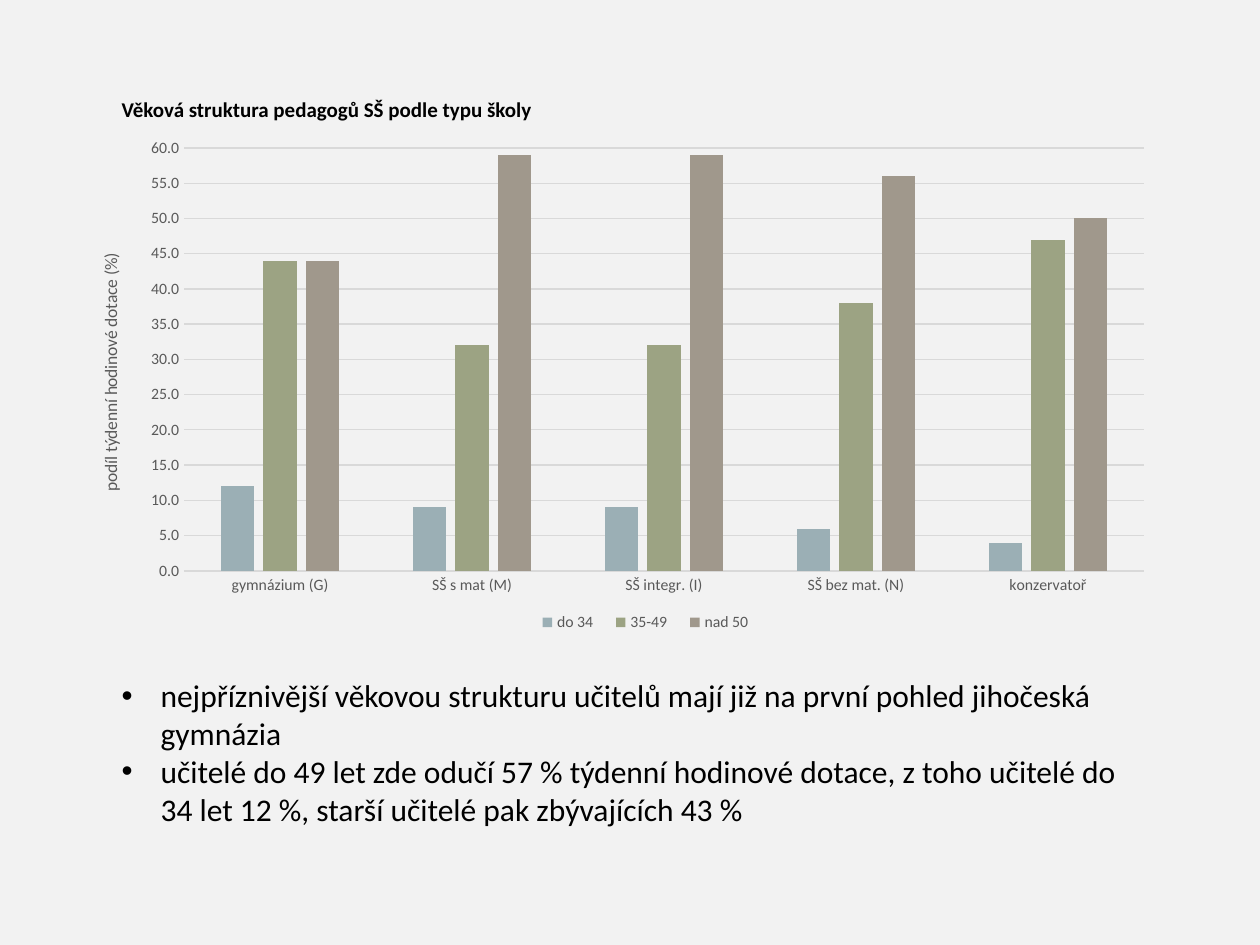
from dataclasses import dataclass

from lxml.etree import SubElement
from pptx import Presentation
from pptx.chart.data import CategoryChartData
from pptx.dml.color import RGBColor
from pptx.enum.chart import XL_CHART_TYPE, XL_LEGEND_POSITION, XL_TICK_MARK
from pptx.enum.text import MSO_ANCHOR, MSO_AUTO_SIZE, PP_ALIGN
from pptx.oxml.ns import qn
from pptx.util import Emu, Pt

TITLE = "Věková struktura pedagogů SŠ podle typu školy"
BULLETS = [
    "nejpříznivější věkovou strukturu učitelů mají již na první pohled jihočeská gymnázia",
    "učitelé do 49 let zde odučí 57 % týdenní hodinové dotace, z toho učitelé do 34 let 12 %, "
    "starší učitelé pak zbývajících 43 %",
]
VALUE_AXIS_TITLE = "podíl týdenní hodinové dotace (%)"
SCHOOL_TYPES = ["gymnázium (G)", "SŠ s mat (M)", "SŠ integr. (I)", "SŠ bez mat. (N)", "konzervatoř"]
AGE_GROUPS = [
    ("do 34", [12, 9, 9, 6, 4], "9BAFB5"),
    ("35-49", [44, 32, 32, 38, 47], "9CA383"),
    ("nad 50", [44, 59, 59, 56, 50], "A0988C"),
]

# left, top, width, height in px
SLIDE_SIZE = (1260, 945)
CHART_BOX = (74, 129, 1091, 514)
PLOT_BOX = (184, 148, 960, 423)
AXIS_TITLE_CORNER = (96, 250)
LEGEND_BOX = (525, 607, 241, 31)
TITLE_BOX = (109, 90, 766, 77)
BODY_BOX = (109, 670, 1057, 242)
BULLET_INDENT = 39


@dataclass(frozen=True)
class Theme:
    font: str = "Calibri"
    background: str = "F2F2F2"
    text: str = "000000"
    chart_text: str = "595959"
    grid: str = "D9D9D9"
    title_size: int = 12
    body_size: int = 18
    axis_title_size: int = 10
    label_size: int = 9
    line_width: float = 0.75


THEME = Theme()


def px(length):
    return Emu(length * 914400 // 126)


def set_font(font, size, color, bold=False):
    font.name = THEME.font
    font.size = Pt(size)
    font.bold = bold
    font.color.rgb = RGBColor.from_string(color)


def set_line(line):
    line.color.rgb = RGBColor.from_string(THEME.grid)
    line.width = Pt(THEME.line_width)


def place_in_chart(element, box, before, inner=False):
    """Pin a chart part to a slide position, with its layout ahead of the named siblings."""
    for old_layout in element.findall(qn("c:layout")):
        element.remove(old_layout)
    layout = SubElement(element, qn("c:layout"))
    following = next((child for child in element
                      if child.tag in [qn(name) for name in before]), None)
    if following is not None:
        following.addprevious(layout)
    manual = SubElement(layout, qn("c:manualLayout"))
    settings = [("layoutTarget", "inner")] if inner else []
    settings += [("xMode", "edge"), ("yMode", "edge")]
    left, top, width, height = CHART_BOX
    fractions = [(box[0] - left) / width, (box[1] - top) / height]
    if len(box) == 4:
        fractions += [box[2] / width, box[3] / height]
    settings += [(name, f"{value:.4f}") for name, value in zip("xywh", fractions)]
    for name, value in settings:
        SubElement(manual, qn(f"c:{name}")).set("val", value)


def fill_placeholder(shape, box, texts, size, bold=False):
    """Move a placeholder and write one left-aligned paragraph per text."""
    shape.left, shape.top, shape.width, shape.height = map(px, box)
    frame = shape.text_frame
    frame.word_wrap = True
    frame.auto_size = MSO_AUTO_SIZE.NONE
    frame.vertical_anchor = MSO_ANCHOR.TOP
    for index, text in enumerate(texts):
        paragraph = frame.add_paragraph() if index else frame.paragraphs[0]
        paragraph.alignment = PP_ALIGN.LEFT
        paragraph.space_before = Pt(0)
        run = paragraph.add_run()
        run.text = text
        set_font(run.font, size, THEME.text, bold)


def add_age_chart(slide):
    data = CategoryChartData(number_format="0")
    data.categories = SCHOOL_TYPES
    for name, values, _ in AGE_GROUPS:
        data.add_series(name, values)
    chart = slide.shapes.add_chart(
        XL_CHART_TYPE.COLUMN_CLUSTERED, *map(px, CHART_BOX), data).chart
    chart.has_title = False
    set_font(chart.font, THEME.label_size, THEME.chart_text)

    plot = chart.plots[0]
    plot.gap_width, plot.overlap = 219, -27
    plot.vary_by_categories = False
    for series, (_, _, color) in zip(plot.series, AGE_GROUPS):
        series.format.fill.solid()
        series.format.fill.fore_color.rgb = RGBColor.from_string(color)

    for axis in (chart.category_axis, chart.value_axis):
        axis.major_tick_mark = axis.minor_tick_mark = XL_TICK_MARK.NONE
        set_font(axis.tick_labels.font, THEME.label_size, THEME.chart_text)
    set_line(chart.category_axis.format.line)

    value_axis = chart.value_axis
    value_axis.minimum_scale, value_axis.maximum_scale = 0, 60
    value_axis.major_unit = 5
    value_axis.tick_labels.number_format = "0.0"
    value_axis.tick_labels.number_format_is_linked = False
    value_axis.format.line.fill.background()
    set_line(value_axis.major_gridlines.format.line)
    run = value_axis.axis_title.text_frame.paragraphs[0].add_run()
    run.text = VALUE_AXIS_TITLE
    set_font(run.font, THEME.axis_title_size, THEME.chart_text)

    chart.has_legend = True
    chart.legend.position = XL_LEGEND_POSITION.BOTTOM
    chart.legend.include_in_layout = False
    set_font(chart.legend.font, THEME.label_size, THEME.chart_text)

    plot_area = chart.element.find(f".//{qn('c:plotArea')}")
    axis_title = plot_area.find(f".//{qn('c:title')}")
    legend = chart.element.find(f".//{qn('c:legend')}")
    place_in_chart(plot_area, PLOT_BOX, ["c:barChart"], inner=True)
    place_in_chart(axis_title, AXIS_TITLE_CORNER, ["c:overlay", "c:spPr", "c:txPr"])
    place_in_chart(legend, LEGEND_BOX, ["c:overlay", "c:spPr", "c:txPr"])


def main():
    presentation = Presentation()
    presentation.slide_width, presentation.slide_height = map(px, SLIDE_SIZE)
    slide = presentation.slides.add_slide(presentation.slide_layouts[1])
    slide.background.fill.solid()
    slide.background.fill.fore_color.rgb = RGBColor.from_string(THEME.background)

    add_age_chart(slide)
    fill_placeholder(slide.shapes.title, TITLE_BOX, [TITLE], THEME.title_size, bold=True)
    body = slide.placeholders[1]
    fill_placeholder(body, BODY_BOX, BULLETS, THEME.body_size)
    for paragraph in body.text_frame.paragraphs:
        properties = paragraph._p.get_or_add_pPr()
        properties.set("marL", str(px(BULLET_INDENT)))
        properties.set("indent", str(-px(BULLET_INDENT)))

    presentation.save("out.pptx")


if __name__ == "__main__":
    main()
